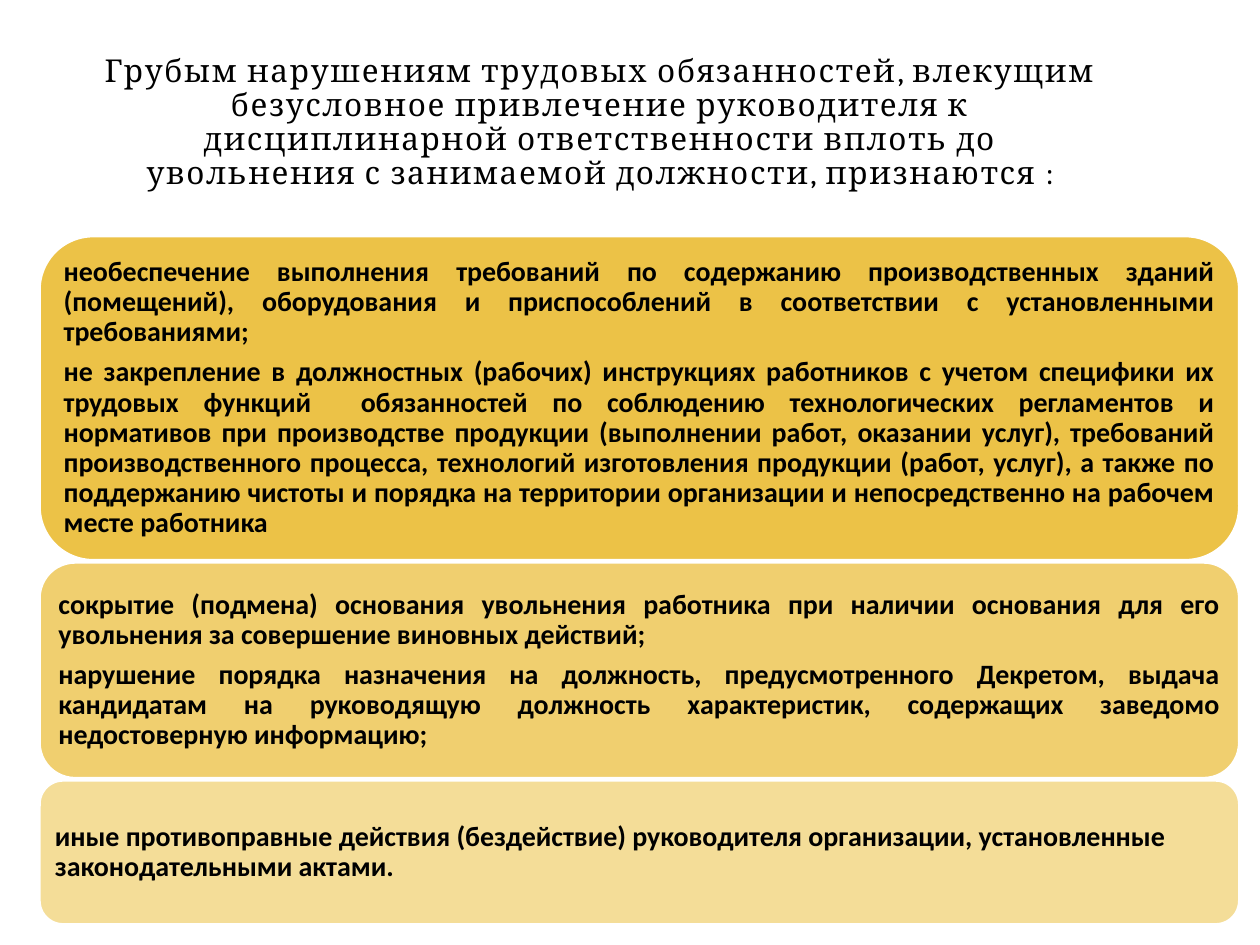
from lxml import etree
from pptx import Presentation
from pptx.dml.color import RGBColor
from pptx.enum.shapes import MSO_SHAPE
from pptx.enum.text import MSO_ANCHOR, MSO_AUTO_SIZE, PP_ALIGN
from pptx.oxml.ns import qn
from pptx.util import Inches, Pt

ROUNDED = MSO_SHAPE.ROUNDED_RECTANGLE
MIDDLE, TOP = MSO_ANCHOR.MIDDLE, MSO_ANCHOR.TOP
CENTER, JUSTIFY, LEFT = PP_ALIGN.CENTER, PP_ALIGN.JUSTIFY, PP_ALIGN.LEFT
NO_AUTO_SIZE = MSO_AUTO_SIZE.NONE
TITLE_ONLY = 5

COLORS = {"text": "000000", "panel": "EABC33", "outline": "FFFFFF"}

TITLE = (
    "Грубым нарушениям трудовых обязанностей, влекущим безусловное "
    "привлечение руководителя к дисциплинарной ответственности вплоть до "
    "увольнения с занимаемой должности, признаются :"
)

PANEL_LEFT, PANEL_WIDTH = 0.31, 9.53
# top, height, opacity in percent, alignment, paragraphs
PANELS = [
    (1.87, 2.58, 90, JUSTIFY, [
        "необеспечение выполнения требований по содержанию производственных "
        "зданий (помещений), оборудования и приспособлений в соответствии с "
        "установленными требованиями;",
        "не закрепление в должностных (рабочих) инструкциях работников с "
        "учетом специфики их трудовых функций  обязанностей по соблюдению "
        "технологических регламентов и нормативов при производстве продукции "
        "(выполнении работ, оказании услуг), требований производственного "
        "процесса, технологий изготовления продукции (работ, услуг), а также "
        "по поддержанию чистоты и порядка на территории организации и "
        "непосредственно на рабочем месте работника",
    ]),
    (4.46, 1.72, 70, JUSTIFY, [
        "сокрытие (подмена) основания увольнения работника при наличии "
        "основания для его увольнения за совершение виновных действий;",
        "нарушение порядка назначения на должность, предусмотренного Декретом, "
        "выдача кандидатам на руководящую должность характеристик, содержащих "
        "заведомо недостоверную информацию;",
    ]),
    (6.19, 1.15, 50, LEFT, [
        "иные противоправные действия (бездействие) руководителя организации, "
        "установленные законодательными актами.",
    ]),
]


def color(name):
    return RGBColor.from_string(COLORS[name])


def format_paragraph(paragraph, alignment, font_name, size, bold):
    paragraph.alignment = alignment
    paragraph.line_spacing = 0.9
    for run in paragraph.runs:
        run.font.name = font_name
        run.font.size = Pt(size)
        run.font.bold = bold
        run.font.color.rgb = color("text")


def set_opacity(shape, percent):
    fill_color = shape.fill._xPr.find(qn("a:solidFill"))[0]
    etree.SubElement(fill_color, qn("a:alpha")).set("val", str(percent * 1000))


def add_title(slide):
    title = slide.shapes.title
    title.left, title.top = Inches(0.7), Inches(0.39)
    title.width, title.height = Inches(8.13), Inches(1.02)
    frame = title.text_frame
    frame.text = TITLE
    frame.word_wrap = True
    frame.auto_size = NO_AUTO_SIZE
    frame.vertical_anchor = TOP
    paragraph = frame.paragraphs[0]
    format_paragraph(paragraph, CENTER, "Cambria", 18, False)
    for run in paragraph.runs:
        run.font._element.set("spc", "100")  # letter spacing of 1 pt


def add_panel(slide, top, height, opacity, alignment, texts):
    panel = slide.shapes.add_shape(
        ROUNDED, Inches(PANEL_LEFT), Inches(top),
        Inches(PANEL_WIDTH), Inches(height))
    panel.shadow.inherit = False
    panel.fill.solid()
    panel.fill.fore_color.rgb = color("panel")
    set_opacity(panel, opacity)
    panel.line.color.rgb = color("outline")
    panel.line.width = Pt(2)

    frame = panel.text_frame
    frame.word_wrap = True
    frame.vertical_anchor = MIDDLE
    frame.margin_left = frame.margin_right = Inches(0.07)
    frame.margin_top = frame.margin_bottom = Inches(0.07)
    frame.text = "\n".join(texts)
    for paragraph in frame.paragraphs:
        format_paragraph(paragraph, alignment, "Calibri", 16, True)
        paragraph.space_after = Pt(5.6)


def main():
    presentation = Presentation()
    presentation.slide_width = Inches(10)
    presentation.slide_height = Inches(7.5)
    slide = presentation.slides.add_slide(presentation.slide_layouts[TITLE_ONLY])
    add_title(slide)
    for panel in PANELS:
        add_panel(slide, *panel)
    presentation.save("out.pptx")


if __name__ == "__main__":
    main()
